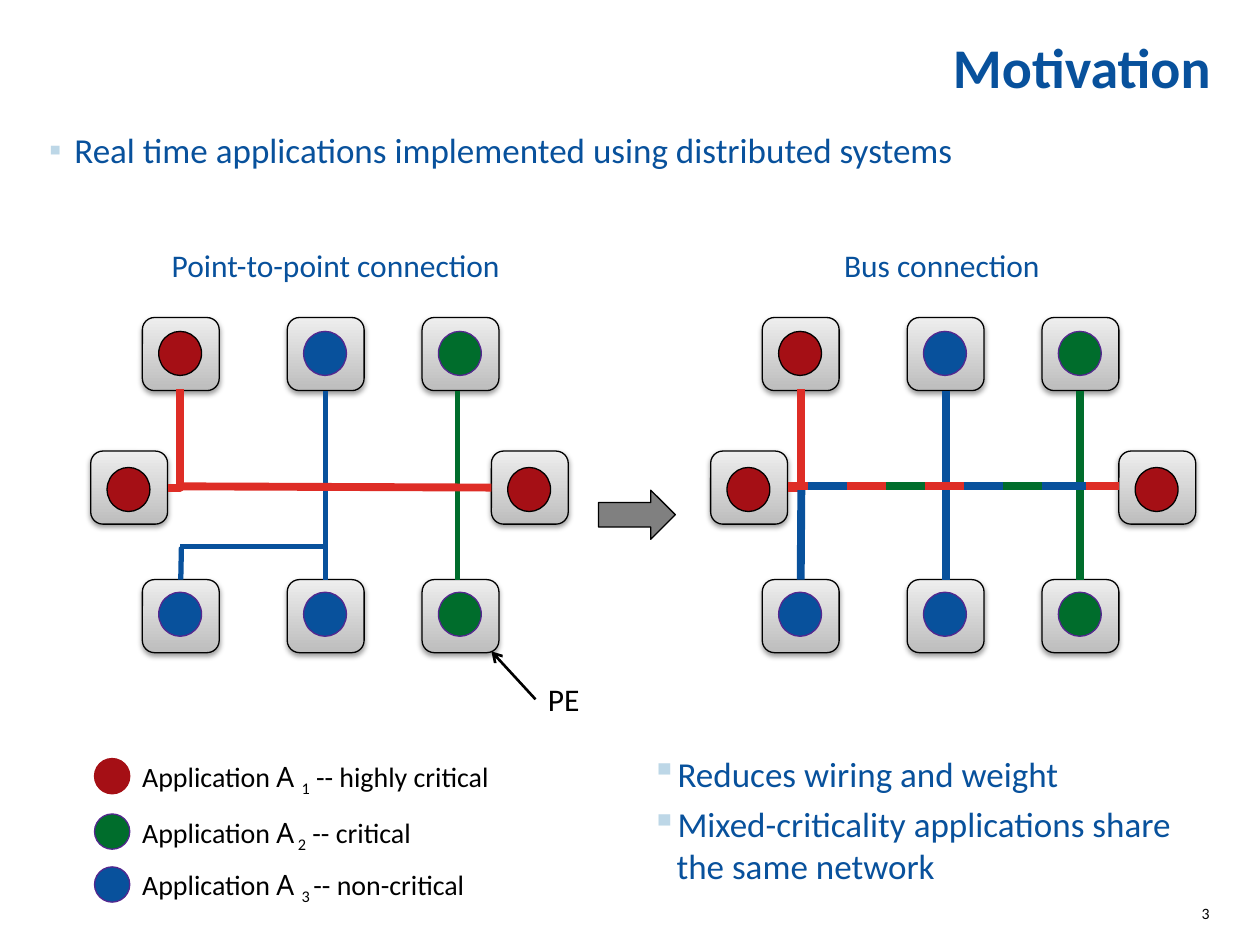
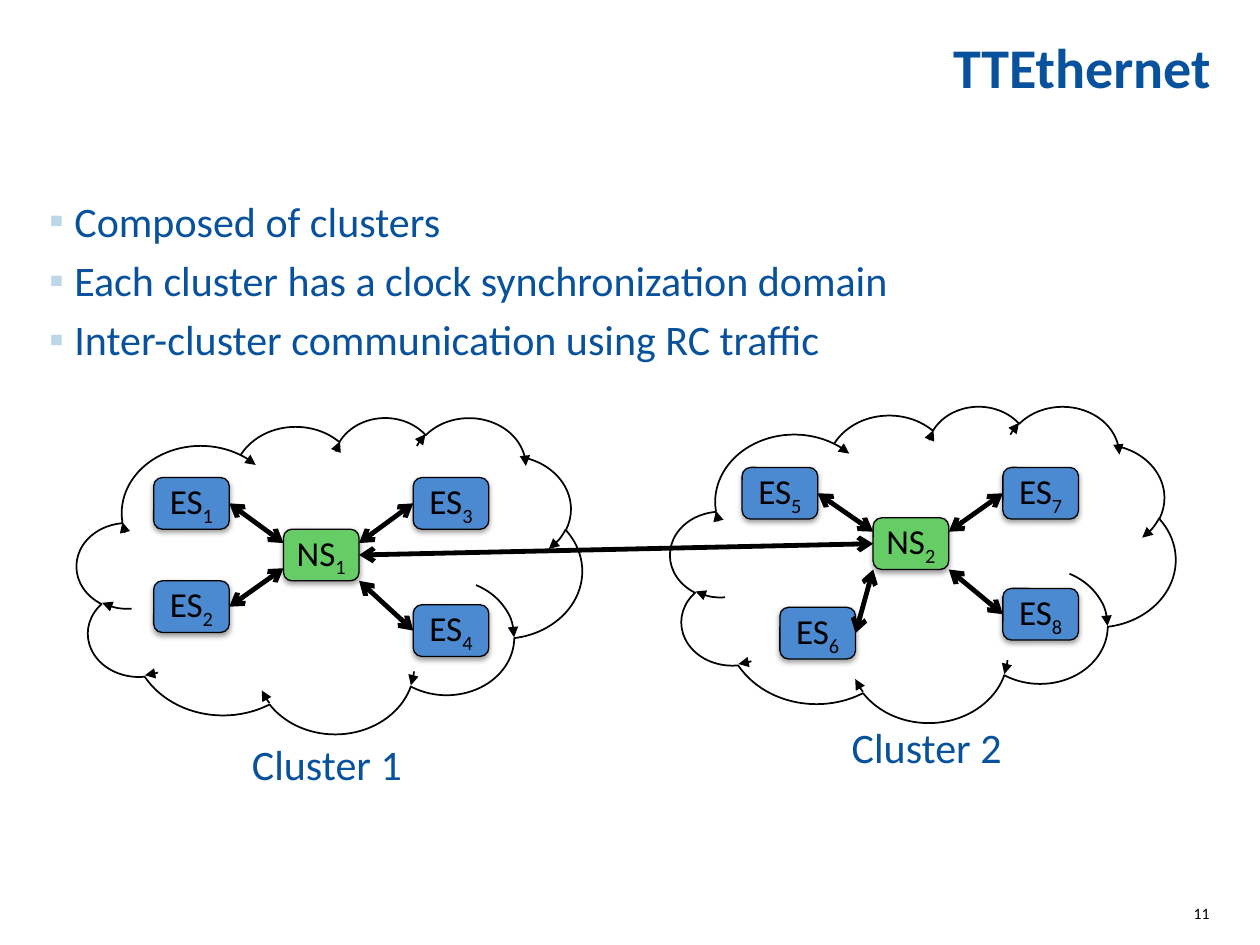
"""Build the Motivation and TTEthernet slides."""
from lxml import etree
from pptx import Presentation
from pptx.dml.color import RGBColor
from pptx.enum import shapes, text
from pptx.oxml.ns import qn
from pptx.util import Inches, Pt

BLUE = RGBColor(0x08, 0x51, 0x9C)
PALE_BLUE = RGBColor(0xBD, 0xD7, 0xE7)
NODE_BLUE = RGBColor(0x4B, 0x89, 0xD0)
NODE_GREEN = RGBColor(0x66, 0xCC, 0x66)
GREEN = RGBColor(0x00, 0x6D, 0x2C)
RED = RGBColor(0xDE, 0x2D, 0x26)
DARK_RED = RGBColor(0xA5, 0x0F, 0x15)
PURPLE = RGBColor(0x54, 0x27, 0x8F)
SILVER = RGBColor(0xBD, 0xBD, 0xBD)
LIGHT = RGBColor(0xEE, 0xEE, 0xEE)
GREY = RGBColor(0x80, 0x80, 0x80)
BLACK = RGBColor(0, 0, 0)
FONT = "Calibri"
SHAPE = shapes.MSO_SHAPE
ALIGN = text.PP_ALIGN
TOP, LEFT, BOTTOM, RIGHT = range(4)


def box(*lengths):
    return [Inches(n) for n in lengths]


def sub(parent, tag, **attrs):
    return etree.SubElement(parent, qn(tag), {k: str(v) for k, v in attrs.items()})


class Deck:
    def __init__(self):
        self.prs = Presentation()
        self.prs.slide_width, self.prs.slide_height = box(10, 7.5)
        self.s = None

    def slide(self, title, number):
        self.s = self.prs.slides.add_slide(self.prs.slide_layouts[1])
        sp = self.s.shapes.title
        self.place(sp, 0.39, 0, 9.22, 0.79)
        tf = self.frame(sp, anchor=text.MSO_ANCHOR.BOTTOM)
        tf.text = title
        p = tf.paragraphs[0]
        p.alignment, p.line_spacing = ALIGN.RIGHT, 0.8
        self.font(p.runs[0], 32, BLUE, bold=True)
        self.label(number, (9.27, 7.17, 0.33, 0.33), 9, BLACK, ALIGN.RIGHT, inset=0)

    def place(self, sp, *at):
        sp.left, sp.top, sp.width, sp.height = box(*at)

    def frame(self, sp, inset=0, anchor=text.MSO_ANCHOR.TOP, wrap=True):
        tf = sp.text_frame
        tf.auto_size = text.MSO_AUTO_SIZE.NONE
        tf.word_wrap, tf.vertical_anchor = wrap, anchor
        tf.margin_left = tf.margin_right = Inches(inset)
        tf.margin_top = tf.margin_bottom = Inches(inset / 2)
        return tf

    def font(self, r, size, color, bold=False, name=FONT, subscript=False):
        r.font.size, r.font.bold, r.font.name = Pt(size), bold, name
        r.font.color.rgb = color
        if subscript:
            r._r.get_or_add_rPr().set("baseline", "-25000")

    def textbox(self, at):
        return self.s.shapes.add_textbox(*box(*at))

    def label(self, words, at, size, color, align=ALIGN.LEFT, inset=0.1, wrap=True, before=0):
        tf = self.frame(self.textbox(at), inset, wrap=wrap)
        tf.text = words
        p = tf.paragraphs[0]
        p.alignment, p.space_before = align, Pt(before)
        self.font(p.runs[0], size, color)

    def bullets(self, sp, lines, size):
        tf = self.frame(sp)
        tf.text = "\n".join(lines)
        for p in tf.paragraphs:
            p.space_before = Pt(5)
            pPr = p._p.get_or_add_pPr()
            pPr.set("marL", str(Inches(0.2)))
            pPr.set("indent", str(Inches(-0.24)))
            sub(sub(pPr, "a:buClr"), "a:srgbClr", val=PALE_BLUE)
            sub(pPr, "a:buChar", char="▪")
            self.font(p.runs[0], size, BLUE)

    def body(self, lines, at, size):
        sp = self.s.placeholders[1]
        self.place(sp, *at)
        self.bullets(sp, lines, size)

    def shape(self, kind, at, fill=None, line=BLACK, width=0.75):
        sp = self.s.shapes.add_shape(kind, *box(*at))
        if fill is None:
            sp.fill.background()
        else:
            sp.fill.solid()
            sp.fill.fore_color.rgb = fill
        sp.line.color.rgb, sp.line.width = line, Pt(width)
        sp.shadow.inherit = False
        return sp

    def raised(self, at, fill):
        sp = self.shape(SHAPE.ROUNDED_RECTANGLE, at, fill)
        effects = sp._element.spPr.find(qn("a:effectLst"))
        shadow = sub(effects, "a:outerShdw", blurRad=Pt(3.1), dist=Pt(1.6),
                     dir=5400000, rotWithShape=0)
        sub(sub(shadow, "a:srgbClr", val=BLACK), "a:alpha", val=38000)
        return sp

    def element(self, x, y):
        sp = self.raised((x, y, 0.61, 0.58), SILVER)
        sp.fill.gradient()
        sp.fill.gradient_angle = 90
        for stop, color in zip(sp.fill.gradient_stops, (SILVER, LIGHT)):
            stop.color.rgb = color
        for stop, position in zip(sp.fill.gradient_stops, (0, 1)):
            stop.position = position
        return sp

    def node(self, name, index, x, y, fill):
        sp = self.raised((x, y, 0.6, 0.41), fill)
        p = self.frame(sp, anchor=text.MSO_ANCHOR.MIDDLE).paragraphs[0]
        p.alignment = ALIGN.CENTER
        self.runs(p, 20, [(name, FONT, False), (index, FONT, True)])
        return sp

    def runs(self, p, size, parts):
        for words, name, subscript in parts:
            r = p.add_run()
            r.text = words
            self.font(r, size, BLACK, name=name, subscript=subscript)

    def app(self, x, y, color, w=0.34, h=0.35, line=None):
        if line is None:
            line = BLACK if color == DARK_RED else PURPLE
        self.shape(SHAPE.OVAL, (x, y, w, h), color, line)

    def heads(self, sp, *ends, kind="arrow"):
        for end in ends:
            sub(sp.line._get_or_add_ln(), "a:" + end, type=kind)

    def line(self, at, color, width, begin=None, end=None, heads=(),
             kind=shapes.MSO_CONNECTOR.STRAIGHT):
        c = self.s.shapes.add_connector(kind, *box(*at))
        if begin:
            c.begin_connect(*begin)
        if end:
            c.end_connect(*end)
        c.line.color.rgb, c.line.width = color, Pt(width)
        self.heads(c, *heads)
        sub(c._element.spPr, "a:effectLst")
        return c

    def elbow(self, x1, y1, x2, y2, color, width):
        cx, cy = (x1 + x2) / 2, (y1 + y2) / 2
        w, h = (y2 - y1) / 2, (x1 - x2) / 2
        c = self.line((cx - w, cy - h, cx + w, cy + h), color, width,
                      kind=shapes.MSO_CONNECTOR.ELBOW)
        spPr = c._element.spPr
        spPr.find(qn("a:xfrm")).set("rot", "5400000")
        spPr.find(qn("a:prstGeom")).set("prst", "bentConnector2")


def network(deck, dx, east_x):
    columns = (1.13, 2.28, 3.35)
    rows = ((2.52, 0.11, (DARK_RED, BLUE, GREEN)), (4.6, 0.1, (BLUE, BLUE, GREEN)))
    spots = [(x + dx, y, gap, color) for y, gap, colors in rows
             for x, color in zip(columns, colors)]
    spots += [(x, 3.58, 0.13, DARK_RED) for x in (0.72 + dx, east_x)]
    elements = []
    for x, y, gap, color in spots:
        elements.append(deck.element(x, y))
        deck.app(x + 0.13, y + gap, color)
    return elements


def motivation(deck):
    deck.slide("Motivation", "3")
    deck.body(["Real time applications implemented using distributed systems"],
              (0.39, 1.02, 9.21, 0.7), 20)
    for words, x in (("Point-to-point connection", 0.36), ("Bus connection", 5.17)):
        deck.label(words, (x, 1.9, 4.61, 0.4), 18, BLUE, ALIGN.CENTER)
    deck.line((4.25, 5.55, 3.9, 5.17), BLACK, 1.5, heads=["tailEnd"])
    deck.label("PE", (4.25, 5.35, 0.46, 0.4), 18, BLACK, wrap=False)

    legend = ((6.02, DARK_RED, DARK_RED, "A ", "1", " -- highly critical"),
              (6.46, GREEN, PURPLE, "A", " 2", " -- critical"),
              (6.88, BLUE, PURPLE, "A ", "3 ", "-- non-critical"))
    for y, color, line, letter, index, level in legend:
        deck.app(0.75, y, color, 0.28, 0.28, line)
        tf = deck.frame(deck.textbox((1.03, y - 0.04, 3.05, 0.37)), 0.1, wrap=False)
        deck.runs(tf.paragraphs[0], 16, [
            ("Application ", FONT, False), (letter, "Noto Sans", False),
            (index, FONT, True), (level, FONT, False)])

    nw, n, ne, sw, south, se, west, east = network(deck, 0, 3.9)
    deck.line((2.59, 3.1, 2.59, 4.6), BLUE, 3, (n, BOTTOM), (south, TOP))
    deck.line((1.44, 4.34, 1.44, 4.6), BLUE, 3, end=(sw, TOP))
    deck.line((2.59, 4.34, 1.43, 4.34), BLUE, 3)
    deck.line((3.63, 3.1, 3.63, 4.6), GREEN, 3)
    deck.line((1.43, 3.86, 3.9, 3.87), RED, 4.5, end=(east, LEFT))
    deck.elbow(1.43, 3.09, 1.33, 3.87, RED, 4.5)
    deck.shape(SHAPE.RIGHT_ARROW, (4.75, 3.89, 0.61, 0.39), GREY)

    nw, n, ne, sw, south, se, west, east = network(deck, 4.92, 8.88)
    deck.line((8.58, 3.1, 8.58, 4.6), GREEN, 4.5, (ne, BOTTOM), (se, TOP))
    deck.line((7.49, 3.1, 7.49, 4.6), BLUE, 4.5, (n, BOTTOM), (south, TOP))
    deck.elbow(6.36, 3.09, 6.25, 3.87, RED, 4.5)
    deck.line((6.36, 3.89, 6.36, 4.6), BLUE, 4.5, end=(sw, TOP))
    edges = [6.25] + [6.41 + 0.31 * i for i in range(7)] + [8.62, 8.88]
    colors = (RED, BLUE, RED, GREEN, RED, BLUE, GREEN, BLUE, RED)
    for x1, x2, color in zip(edges, edges[1:], colors):
        deck.line((x1, 3.86, x2, 3.86), color, 4.5)
    deck.bullets(deck.textbox((5.17, 5.97, 4.36, 0.7)),
                 ["Reduces wiring and weight",
                  "Mixed-criticality applications share the same network"], 20)


def cluster(deck, switch, stations, cloud_at):
    """Draw one cluster and return its network switch."""
    index, x, y = switch
    ns = deck.node("NS", index, x, y, NODE_GREEN)
    for number, sx, sy, side, port in stations:
        es = deck.node("ES", number, sx, sy, NODE_BLUE)
        port_x = x if side == RIGHT else x + 0.6
        deck.line((sx, sy, port_x, y + port), BLACK, 2.75, begin=(es, side),
                  heads=["headEnd", "tailEnd"])
    cloud = deck.shape(SHAPE.CLOUD, (*cloud_at, 4.01, 2.51), width=1)
    deck.heads(cloud, "tailEnd", kind="triangle")
    return ns


def ttethernet(deck):
    deck.slide("TTEthernet", "11")
    deck.body(["Composed of clusters",
               "Each cluster has a clock synchronization domain",
               "Inter-cluster communication using RC traffic"],
              (0.39, 1.55, 9.21, 1.41), 24)
    ns1 = cluster(deck, ("1", 2.25, 4.2),
                  [("1", 1.22, 3.79, RIGHT, 0.11), ("2", 1.22, 4.61, RIGHT, 0.31),
                   ("3", 3.28, 3.79, LEFT, 0.11), ("4", 3.28, 4.8, LEFT, 0.41)],
                  (0.61, 3.31))
    ns2 = cluster(deck, ("2", 6.93, 4.11),
                  [("5", 5.89, 3.71, RIGHT, 0.11), ("6", 6.19, 4.82, RIGHT, 0.41),
                   ("7", 7.96, 3.71, LEFT, 0.11), ("8", 7.96, 4.67, LEFT, 0.41)],
                  (5.32, 3.22))
    deck.line((2.85, 4.4, 6.93, 4.32), BLACK, 2.75, (ns1, RIGHT), (ns2, LEFT),
              ["headEnd", "tailEnd"])
    for words, x, y in (("Cluster 1", 0.56, 5.86), ("Cluster 2", 5.32, 5.73)):
        deck.label(words, (x, y, 4.07, 0.67), 24, BLUE, ALIGN.CENTER, inset=0, before=5)


def main():
    deck = Deck()
    motivation(deck)
    ttethernet(deck)
    deck.prs.save("out.pptx")


if __name__ == "__main__":
    main()
